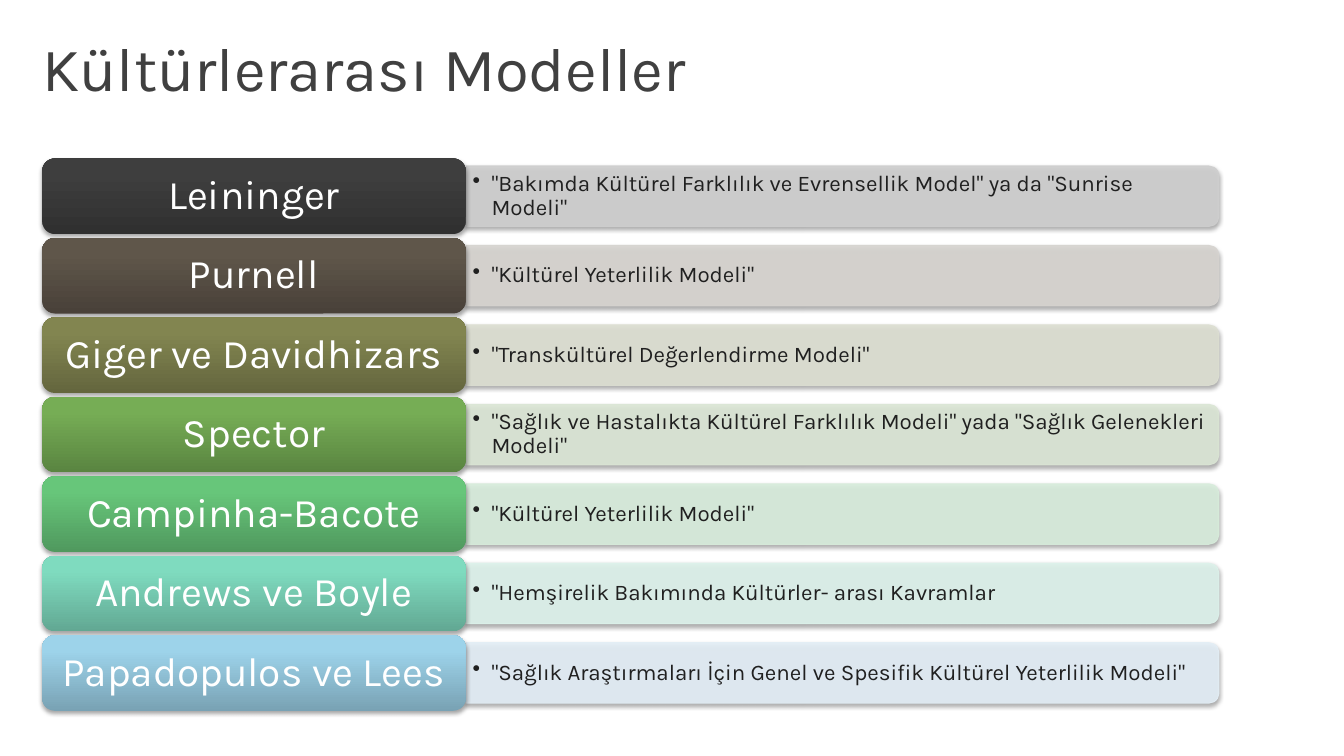
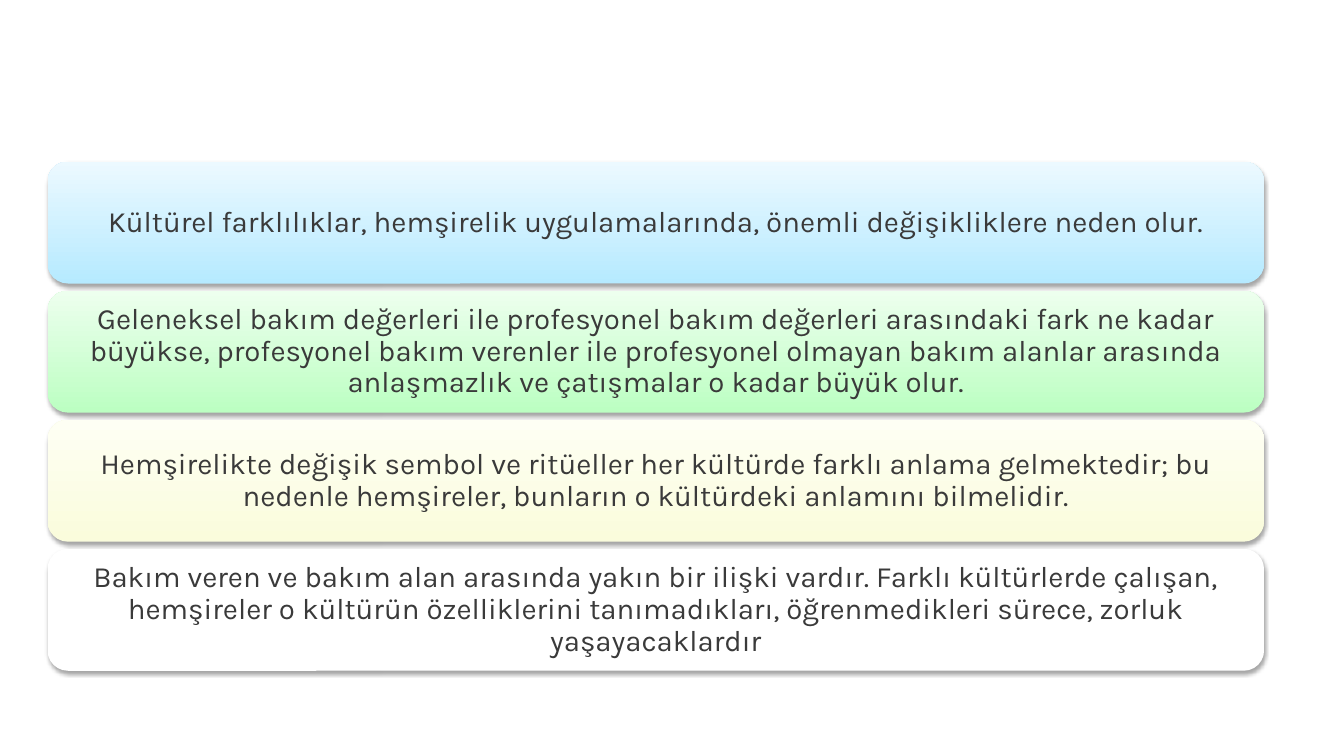
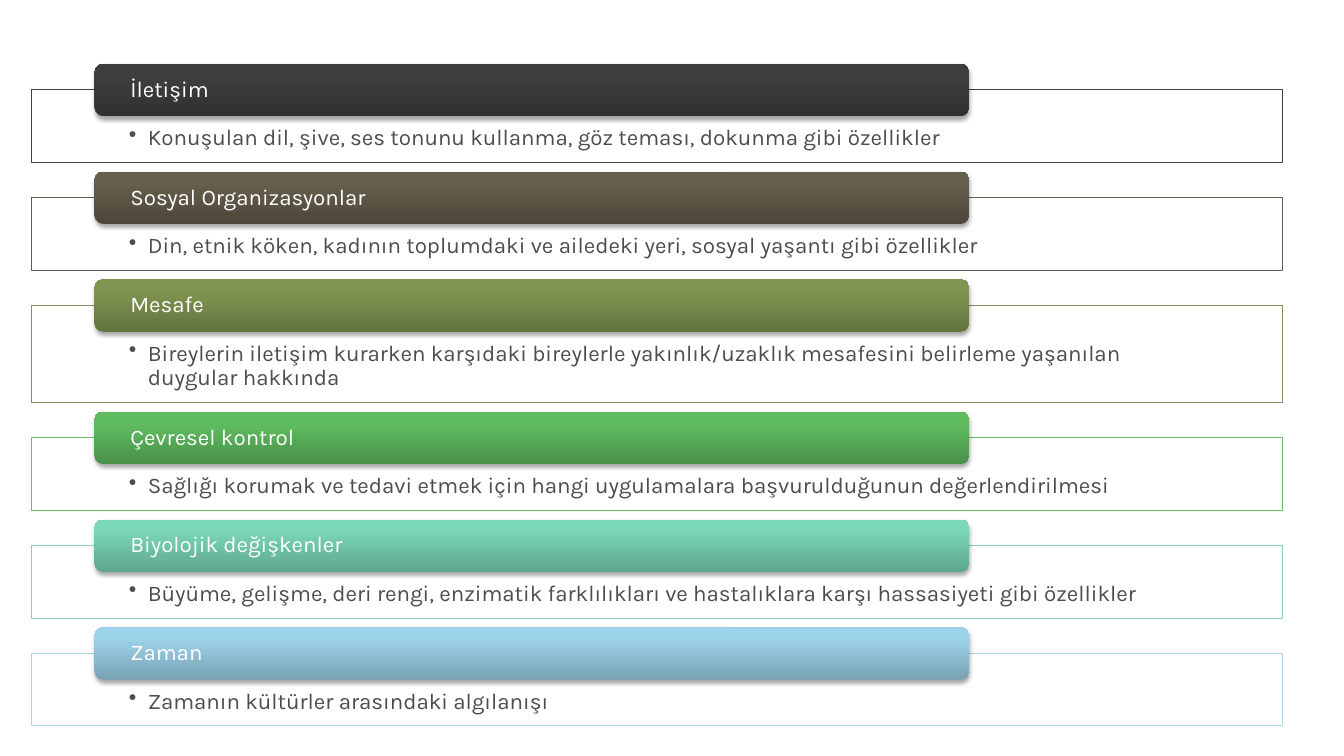
from dataclasses import dataclass

from lxml import etree
from pptx import Presentation
from pptx import util as u
from pptx.dml.color import RGBColor
from pptx.enum import shapes, text
from pptx.oxml import ns

FONT = "Karla"
COLORS = {
    "title": "404040",
    "white": "FFFFFF",
    "band text": "202020",
    "statement text": "3A3A3A",
    "detail text": "4D4D4D",
    "shadow": "000000",
}
SHADOW_BLUR, SHADOW_DISTANCE, SHADOW_ALPHA = u.Pt(3.1), u.Pt(1.8), 35000
BAND_ALPHA = 90000
BULLET_INDENT = u.Pt(13.5)
TITLE_ONLY, BLANK = 5, 6


@dataclass
class Box:
    left: float
    top: float
    width: float
    height: float

    def lengths(self) -> tuple:
        return tuple(u.Pt(n) for n in (self.left, self.top, self.width, self.height))


@dataclass
class TextStyle:
    size: float
    color: str
    insets: tuple  # left, top, right, bottom
    align: text.PP_ALIGN = text.PP_ALIGN.LEFT
    anchor: text.MSO_ANCHOR = text.MSO_ANCHOR.MIDDLE
    bullet: bool = False


@dataclass
class Model:
    author: str
    description: str
    dark: str
    bright: str
    pale: str


@dataclass
class Statement:
    wording: str
    bottom: str
    top: str


@dataclass
class Topic:
    heading: str
    detail: str
    dark: str
    bright: str
    outline: str
    height: float = 51.8


TITLE = TextStyle(44, COLORS["title"], (7.2, 8, 7.2, 3.6), anchor=text.MSO_ANCHOR.TOP)
AUTHOR = TextStyle(29, COLORS["white"], (8.5, 4.3, 8.5, 4.3), text.PP_ALIGN.CENTER)
DESCRIPTION = TextStyle(16, COLORS["band text"], (5, 2.2, 5, 2.2), bullet=True)
STATEMENT = TextStyle(21, COLORS["statement text"], (6.5, 6.5, 6.5, 6.5), text.PP_ALIGN.CENTER)
HEADING = TextStyle(16, COLORS["white"], (23.8, 0, 23.8, 0))
DETAIL = TextStyle(16, COLORS["detail text"], (69.3, 26, 69.3, 8.6),
                   anchor=text.MSO_ANCHOR.TOP, bullet=True)

MODELS = [
    Model("Leininger", '"Bakımda Kültürel Farklılık ve Evrensellik Model" ya da "Sunrise Modeli"',
          "303030", "3E3E3E", "CFCFCF"),
    Model("Purnell", '"Kültürel Yeterlilik Modeli"', "494139", "5F564A", "D7D4D0"),
    Model("Giger ve Davidhizars", '"Transkültürel Değerlendirme Modeli"',
          "64663E", "828550", "DDDFD2"),
    Model("Spector",
          '"Sağlık ve Hastalıkta Kültürel Farklılık Modeli" yada "Sağlık Gelenekleri Modeli"',
          "5A8541", "76AD55", "DBE6D5"),
    Model("Campinha-Bacote", '"Kültürel Yeterlilik Modeli"', "50995E", "67C67A", "D8EDDC"),
    Model("Andrews ve Boyle", '"Hemşirelik Bakımında Kültürler- arası Kavramlar',
          "62A893", "7FDBBF", "DDF2EB"),
    Model("Papadopulos ve Lees",
          '"Sağlık Araştırmaları İçin Genel ve Spesifik Kültürel Yeterlilik Modeli"',
          "79A2B4", "9DD3EA", "E3EEF6"),
]

STATEMENTS = [
    Statement("Kültürel farklılıklar, hemşirelik uygulamalarında, önemli değişikliklere neden "
              "olur.", "B6EAFF", "ECF9FF"),
    Statement("Geleneksel bakım değerleri ile profesyonel bakım değerleri arasındaki fark ne "
              "kadar büyükse, profesyonel bakım verenler ile profesyonel olmayan bakım alanlar "
              "arasında anlaşmazlık ve çatışmalar o kadar büyük olur.", "BCFFC2", "EDFFEE"),
    Statement("Hemşirelikte değişik sembol ve ritüeller her kültürde farklı anlama gelmektedir; "
              "bu nedenle hemşireler, bunların o kültürdeki anlamını bilmelidir.",
              "FAFCDC", "FEFFF4"),
    Statement("Bakım veren ve bakım alan arasında yakın bir ilişki vardır. Farklı kültürlerde "
              "çalışan, hemşireler o kültürün özelliklerini tanımadıkları, öğrenmedikleri "
              "sürece, zorluk yaşayacaklardır", "FFFFFF", "FFFFFF"),
]

TOPICS = [
    Topic("İletişim", "Konuşulan dil, şive, ses tonunu kullanma, göz teması, dokunma gibi "
          "özellikler", "303030", "3E3E3E", "404040"),
    Topic("Sosyal Organizasyonlar", "Din, etnik köken, kadının toplumdaki ve ailedeki yeri, "
          "sosyal yaşantı gibi özellikler", "4E463A", "665E4C", "665C51"),
    Topic("Mesafe", "Bireylerin iletişim kurarken karşıdaki bireylerle yakınlık/uzaklık "
          "mesafesini belirleme yaşanılan duygular hakkında",
          "63733E", "809551", "80925C", 69.3),
    Topic("Çevresel kontrol", "Sağlığı korumak ve tedavi etmek için hangi uygulamalara "
          "başvurulduğunun değerlendirilmesi", "49914A", "5FBD60", "6DB86D"),
    Topic("Biyolojik değişkenler", "Büyüme, gelişme, deri rengi, enzimatik farklılıkları ve "
          "hastalıklara karşı hassasiyeti gibi özellikler", "5EA68E", "7AD7B7", "89D3B9"),
    Topic("Zaman", "Zamanın kültürler arasındaki algılanışı", "79A2B4", "9DD3EA", "ABD4E8"),
]


def rgb(color: str) -> RGBColor:
    return RGBColor.from_string(color)


def add_child(parent, tag: str, **attributes):
    values = {name: str(value) for name, value in attributes.items()}
    return etree.SubElement(parent, ns.qn(tag), values)


def add_shadow(shape) -> None:
    shape.shadow.inherit = False
    effects = shape._element.spPr.find(ns.qn("a:effectLst"))
    shadow = add_child(effects, "a:outerShdw", blurRad=SHADOW_BLUR, dist=SHADOW_DISTANCE,
                       dir=5400000, rotWithShape=0)
    color = add_child(shadow, "a:srgbClr", val=COLORS["shadow"])
    add_child(color, "a:alpha", val=SHADOW_ALPHA)


def write(shape, wording: str, style: TextStyle) -> None:
    frame = shape.text_frame
    frame.word_wrap = True
    frame.auto_size = text.MSO_AUTO_SIZE.NONE
    frame.vertical_anchor = style.anchor
    (frame.margin_left, frame.margin_top,
     frame.margin_right, frame.margin_bottom) = (u.Pt(inset) for inset in style.insets)
    paragraph = frame.paragraphs[0]
    paragraph.alignment = style.align
    paragraph.line_spacing = 0.9
    if style.bullet:
        properties = paragraph._p.get_or_add_pPr()
        properties.set("marL", str(BULLET_INDENT))
        properties.set("indent", str(-BULLET_INDENT))
        add_child(properties, "a:buChar", char="•")
    run = paragraph.add_run()
    run.text = wording
    run.font.name = FONT
    run.font.size = u.Pt(style.size)
    run.font.color.rgb = rgb(style.color)


def add_card(slide, box: Box, bottom: str, top: str, wording: str, style: TextStyle,
             bright_from: float = 0.8) -> None:
    """Add a rounded, shaded box; its top colour is reached at bright_from."""
    card = slide.shapes.add_shape(shapes.MSO_SHAPE.ROUNDED_RECTANGLE, *box.lengths())
    card.fill.gradient()
    card.fill.gradient_angle = 90
    for stop, color, position in zip(card.fill.gradient_stops, (bottom, top), (0, bright_from)):
        stop.color.rgb = rgb(color)
        stop.position = position
    card.line.fill.background()
    add_shadow(card)
    write(card, wording, style)


def add_band(slide, box: Box, color: str) -> None:
    """Add a translucent band whose right corners are rounded."""
    offset = (box.width - box.height) / 2
    upright = Box(box.left + offset, box.top - offset, box.height, box.width)
    band = slide.shapes.add_shape(shapes.MSO_SHAPE.ROUND_2_SAME_RECTANGLE, *upright.lengths())
    band.rotation = 90
    band.fill.solid()
    band.fill.fore_color.rgb = rgb(color)
    band.line.color.rgb = rgb(color)
    band.line.width = u.Pt(0.75)
    for fill_color in band._element.spPr.iter(ns.qn("a:srgbClr")):
        add_child(fill_color, "a:alpha", val=BAND_ALPHA)
    add_shadow(band)


def add_models_slide(presentation) -> None:
    slide = presentation.slides.add_slide(presentation.slide_layouts[TITLE_ONLY])
    title = slide.shapes.title
    title.left, title.top, title.width, title.height = Box(23, 19.5, 768, 85.7).lengths()
    write(title, "Kültürlerarası Modeller", TITLE)
    for index, model in enumerate(MODELS):
        label = Box(30.2, 113.2 + index * 56.75, 302.5, 54)
        band = Box(label.left + label.width, label.top + 5.4, 538, 43.2)
        add_band(slide, band, model.pale)
        description = slide.shapes.add_textbox(
            *Box(band.left, band.top + 2.1, 535.7, 39).lengths())
        write(description, model.description, DESCRIPTION)
        add_card(slide, label, model.dark, model.bright, model.author, AUTHOR)


def add_statements_slide(presentation) -> None:
    slide = presentation.slides.add_slide(presentation.slide_layouts[BLANK])
    for index, statement in enumerate(STATEMENTS):
        box = Box(34, 115.4 + index * 92.2, 869, 87.1)
        add_card(slide, box, statement.bottom, statement.top, statement.wording, STATEMENT, 1)


def add_topics_slide(presentation) -> None:
    slide = presentation.slides.add_slide(presentation.slide_layouts[BLANK])
    top, gap = 64.2, 25.2
    for topic in TOPICS:
        frame = slide.shapes.add_shape(shapes.MSO_SHAPE.RECTANGLE,
                                       *Box(22.8, top, 893, topic.height).lengths())
        frame.shadow.inherit = False
        frame.fill.solid()
        frame.fill.fore_color.rgb = rgb(COLORS["white"])
        frame.line.color.rgb = rgb(topic.outline)
        frame.line.width = u.Pt(0.75)
        write(frame, topic.detail, DETAIL)
        add_card(slide, Box(67.5, top - 18.6, 625, 37.4), topic.dark, topic.bright,
                 topic.heading, HEADING)
        top += topic.height + gap


def main() -> None:
    presentation = Presentation()
    presentation.slide_width, presentation.slide_height = u.Pt(960), u.Pt(540)
    add_models_slide(presentation)
    add_statements_slide(presentation)
    add_topics_slide(presentation)
    presentation.save("out.pptx")


if __name__ == "__main__":
    main()
